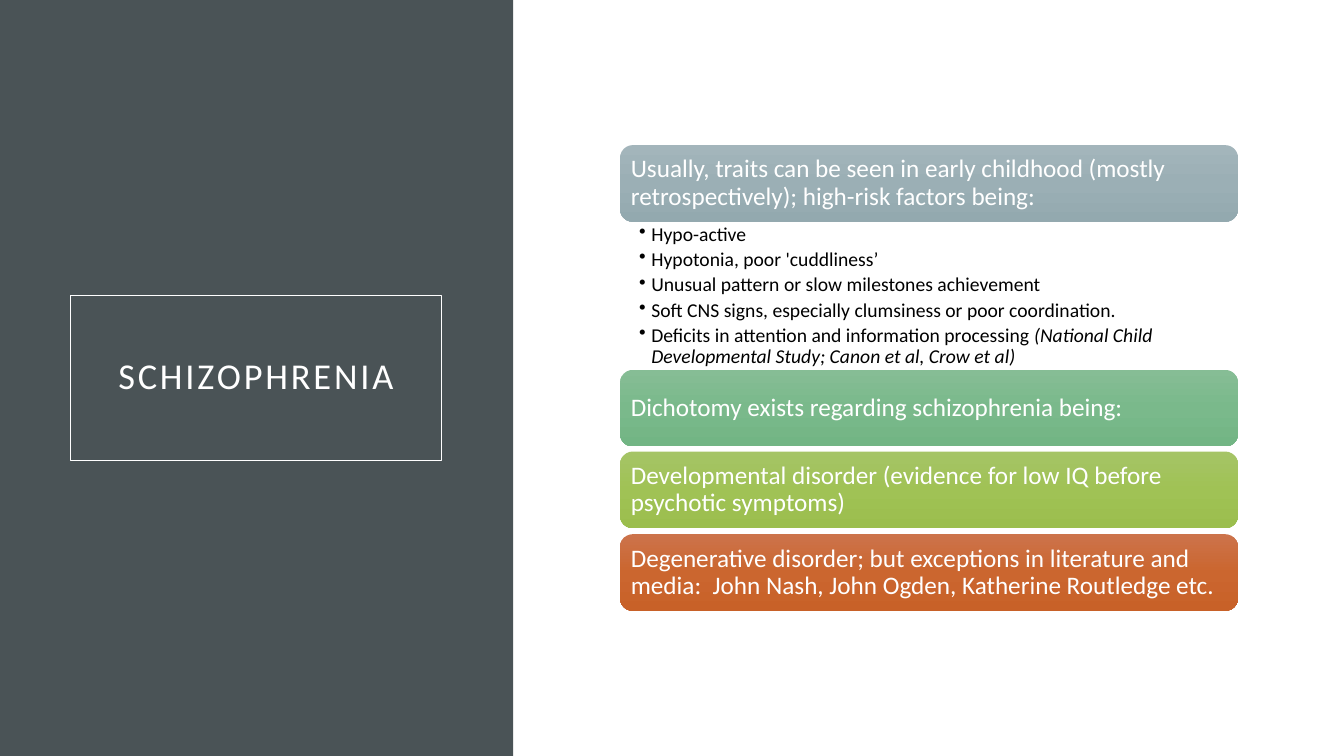
import copy

import pptx
import pptx.dml.color
import pptx.enum.shapes
import pptx.enum.text
import pptx.oxml
import pptx.oxml.ns
import pptx.util

SHAPE = pptx.enum.shapes.MSO_SHAPE
ANCHOR = pptx.enum.text.MSO_ANCHOR
ALIGN = pptx.enum.text.PP_ALIGN

BARS = [
    (144, ("A3B5BB", "9BAFB5", "93A9AF"),
     "Usually, traits can be seen in early childhood (mostly retrospectively); "
     "high-risk factors being:"),
    (367, ("86BD95", "7AB98B", "72B584"),
     "Dichotomy exists regarding schizophrenia being:"),
    (448, ("A5C466", "A0C255", "9BBE4D"),
     "Developmental disorder (evidence for low IQ before psychotic symptoms)"),
    (530, ("CC734B", "CB662F", "C86128"),
     "Degenerative disorder; but exceptions in literature and media:  "
     "John Nash, John Ogden, Katherine Routledge etc."),
]
RISK_FACTORS = [
    ["Hypo-active"],
    ["Hypotonia, poor 'cuddliness’"],
    ["Unusual pattern or slow milestones achievement"],
    ["Soft CNS signs, especially clumsiness or poor coordination."],
    ["Deficits in attention and information processing ",
     "(National Child Developmental Study; Canon et al, Crow et al)"],
]


def px(length):
    """Turn px, at 100 to the inch, into EMU."""
    return pptx.util.Emu(length * 9144)


def color(code):
    """Turn a hex string into a colour."""
    return pptx.dml.color.RGBColor.from_string(code)


def add_span(para, text, *, size, fill, font="Calibri", italic=None, spacing=None):
    """Add formatted text to a paragraph."""
    span = para.add_run()
    span.text = text
    span.font.name = font
    span.font.size = pptx.util.Pt(size)
    span.font.color.rgb = color(fill)
    span.font.italic = italic
    if spacing:
        span.font._element.set("spc", str(spacing * 100))


class SlideBuilder:
    """Hold the style and the current slide."""

    def __init__(self, page):
        """Keep the slide and its text colours."""
        self.page = page
        self.light = "FFFFFF"
        self.dark = "000000"

    def frame(self, box, insets, anchor):
        """Prepare the text frame of a box."""
        frame = box.text_frame
        frame.word_wrap = True
        frame.vertical_anchor = anchor
        (frame.margin_left, frame.margin_top,
         frame.margin_right, frame.margin_bottom) = map(px, insets)
        return frame

    def shape(self, kind, place):
        """Add a preset shape without shadow, fill or line."""
        box = self.page.shapes.add_shape(kind, *map(px, place))
        box.shadow.inherit = False
        box.fill.background()
        box.line.fill.background()
        return box

    def panel(self, place, fill):
        """Add a plain filled rectangle."""
        box = self.shape(SHAPE.RECTANGLE, place)
        box.fill.solid()
        box.fill.fore_color.rgb = color(fill)

    def title(self, place, text):
        """Add the outlined title box."""
        box = self.shape(SHAPE.RECTANGLE, place)
        box.line.color.rgb = color(self.light)
        box.line.width = pptx.util.Pt(0.75)
        para = self.frame(box, (20, 20, 20, 20), ANCHOR.MIDDLE).paragraphs[0]
        para.alignment = ALIGN.CENTER
        para.line_spacing = 0.9
        add_span(para, text, size=26, fill=self.light, spacing=2)

    def bar(self, place, shades, text):
        """Add a rounded bar with a vertical gradient and its heading."""
        box = self.shape(SHAPE.ROUNDED_RECTANGLE, place)
        box.fill.gradient()
        box.fill.gradient_angle = 270
        first = next(box._element.spPr.iter(pptx.oxml.ns.qn("a:gs")))
        first.addnext(copy.deepcopy(first))
        for stop, shade, position in zip(box.fill.gradient_stops, shades, (0, 0.5, 1)):
            stop.color.rgb = color(shade)
            stop.position = position
        para = self.frame(box, (7, 7, 7, 7), ANCHOR.MIDDLE).paragraphs[0]
        para.alignment = ALIGN.LEFT
        para.line_spacing = 0.9
        add_span(para, text, size=18, fill=self.light)

    def bullets(self, place, items):
        """Add a bulleted list whose second spans are italic."""
        box = self.page.shapes.add_textbox(*map(px, place))
        frame = self.frame(box, (19, 3, 14, 3), ANCHOR.TOP)
        for index, item in enumerate(items):
            para = frame.add_paragraph() if index else frame.paragraphs[0]
            para.level = 1
            para.line_spacing = 0.9
            para.space_after = pptx.util.Pt(2.8)
            layout = para._p.get_or_add_pPr()
            layout.set("marL", str(px(12)))
            layout.set("indent", str(px(-12)))
            layout.append(pptx.oxml.parse_xml(
                f'<a:buChar {pptx.oxml.ns.nsdecls("a")} char="•"/>'))
            for text, italic in zip(item, (None, True)):
                add_span(para, text, size=14, fill=self.dark, italic=italic)


def main():
    """Build the slide and save it."""
    deck = pptx.Presentation()
    deck.slide_width, deck.slide_height = px(1333), px(750)
    builder = SlideBuilder(deck.slides.add_slide(deck.slide_layouts[6]))
    builder.panel((0, 0, 509, 750), "4A5356")
    for top, shades, text in BARS:
        builder.bar((615, top, 613, 76), shades, text)
    builder.bullets((615, 220, 613, 147), RISK_FACTORS)
    builder.title((70, 293, 368, 164), "SCHIZOPHRENIA")
    deck.save("out.pptx")


if __name__ == "__main__":
    main()
